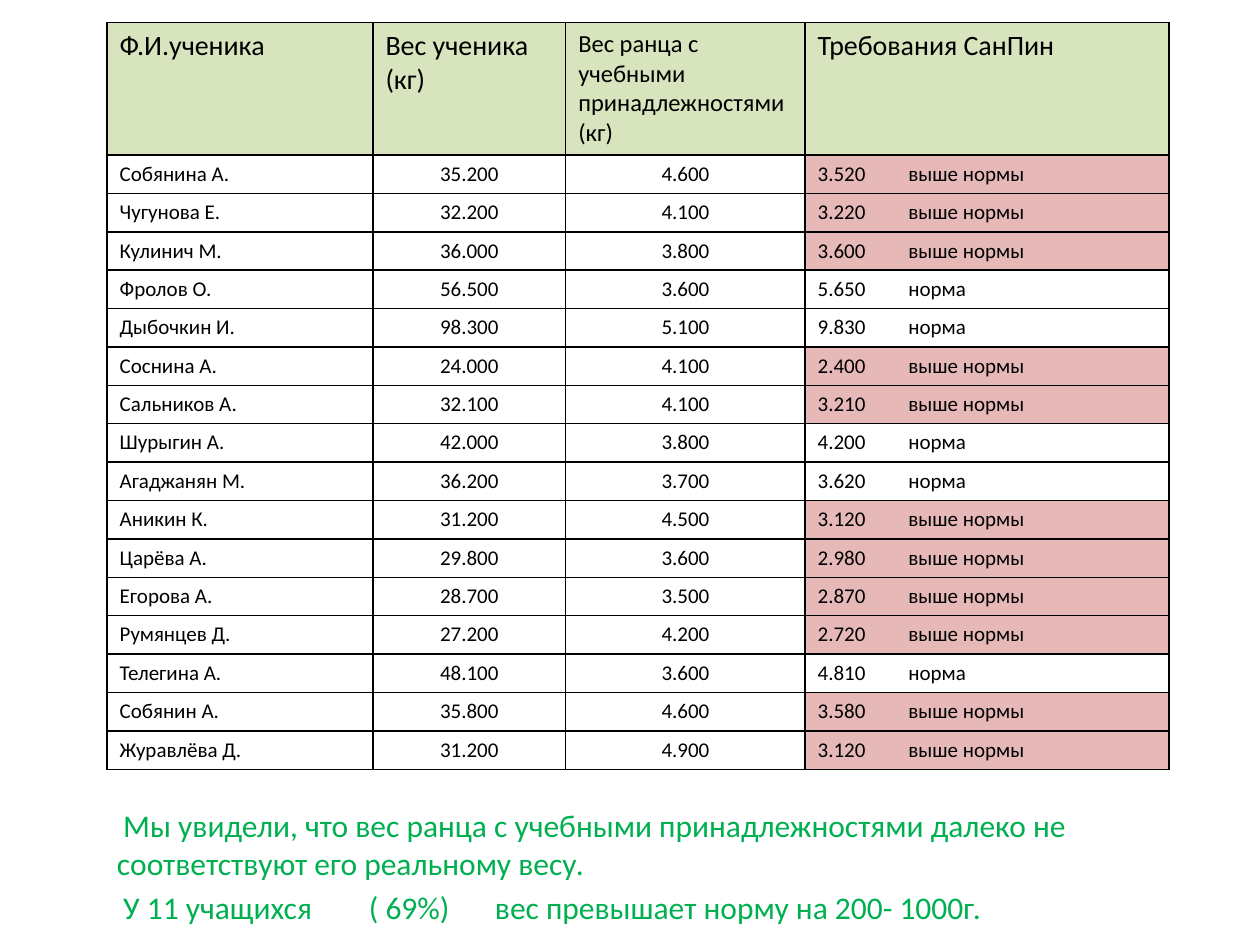
from pptx import Presentation
from pptx.dml.color import RGBColor
from pptx.enum.text import PP_ALIGN as Align
from pptx.oxml.ns import qn
from pptx.util import Inches, Pt
from lxml.etree import SubElement

FONT = "Calibri"
BLACK, GREEN = "000000", "00B050"
HEADER_FILL, OVER_FILL = "D7E4BD", "E6B9B8"

COLUMN_WIDTHS = (2.11, 1.53, 1.9, 2.89)
HEADER_HEIGHT, ROW_HEIGHT = 1.05, 0.305
STATUS_TAB = 0.72

HEADERS = (
    ("Ф.И.ученика", 16),
    ("Вес ученика\n(кг)", 16),
    ("Вес ранца с учебными принадлежностями\n(кг)", 14),
    ("Требования СанПин", 16),
)
# Name, pupil's weight, satchel weight, above the norm
PUPILS = (
    ("Собянина А.", 35.2, 4.6, True),
    ("Чугунова Е.", 32.2, 4.1, True),
    ("Кулинич М.", 36.0, 3.8, True),
    ("Фролов О.", 56.5, 3.6, False),
    ("Дыбочкин И.", 98.3, 5.1, False),
    ("Соснина А.", 24.0, 4.1, True),
    ("Сальников А.", 32.1, 4.1, True),
    ("Шурыгин А.", 42.0, 3.8, False),
    ("Агаджанян М.", 36.2, 3.7, False),
    ("Аникин К.", 31.2, 4.5, True),
    ("Царёва А.", 29.8, 3.6, True),
    ("Егорова А.", 28.7, 3.5, True),
    ("Румянцев Д.", 27.2, 4.2, True),
    ("Телегина А.", 48.1, 3.6, False),
    ("Собянин А.", 35.8, 4.6, True),
    ("Журавлёва Д.", 31.2, 4.9, True),
)
CONCLUSIONS = (
    "Мы увидели, что вес ранца с учебными принадлежностями "
    "далеко не соответствуют его реальному весу.",
    "У 11 учащихся\t( 69%)\tвес превышает норму на 200- 1000г.",
)


def rgb(value):
    return RGBColor.from_string(value)


def style_text(tf, size, color=BLACK, align=Align.LEFT):
    for p in tf.paragraphs:
        p.alignment = align
        for r in p.runs:
            r.font.name = FONT
            r.font.size = Pt(size)
            r.font.color.rgb = rgb(color)


def set_tabs(p, *stops):
    tabs = SubElement(p._p.get_or_add_pPr(), qn("a:tabLst"))
    for stop in stops:
        SubElement(tabs, qn("a:tab"), pos=str(Inches(stop)), algn="l")


def set_borders(cell):
    tc_pr = cell._tc.get_or_add_tcPr()
    for index, side in enumerate(("lnL", "lnR", "lnT", "lnB")):
        ln = SubElement(tc_pr, qn(f"a:{side}"), w=str(Pt(1)))
        fill = SubElement(ln, qn("a:solidFill"))
        SubElement(fill, qn("a:srgbClr"), val=BLACK)
        tc_pr.remove(ln)
        tc_pr.insert(index, ln)  # borders precede the fill


def fill_cell(cell, text, size, fill=None, align=Align.LEFT):
    cell.text_frame.text = text
    style_text(cell.text_frame, size, align=align)
    if fill:
        cell.fill.solid()
        cell.fill.fore_color.rgb = rgb(fill)
    else:
        cell.fill.background()
    set_borders(cell)


def add_weight_table(slide):
    rows = len(PUPILS) + 1
    height = HEADER_HEIGHT + ROW_HEIGHT * len(PUPILS)
    table = slide.shapes.add_table(
        rows, len(HEADERS), Inches(0.85), Inches(0.18),
        Inches(sum(COLUMN_WIDTHS)), Inches(height)).table
    for column, width in zip(table.columns, COLUMN_WIDTHS):
        column.width = Inches(width)
    for row in table.rows:
        row.height = Inches(ROW_HEIGHT)
    table.rows[0].height = Inches(HEADER_HEIGHT)
    table.first_row = table.horz_banding = False

    for col, (text, size) in enumerate(HEADERS):
        fill_cell(table.cell(0, col), text, size, HEADER_FILL)
    for row, (name, weight, satchel, over) in enumerate(PUPILS, 1):
        fill_cell(table.cell(row, 0), name, 12)
        for col, value in enumerate((weight, satchel), 1):
            fill_cell(table.cell(row, col), f"{value:.3f}", 12, align=Align.CENTER)
        limit = table.cell(row, 3)
        status = "выше нормы" if over else "норма"
        fill_cell(limit, f"{weight / 10:.3f}\t{status}", 12, OVER_FILL if over else None)
        set_tabs(limit.text_frame.paragraphs[0], STATUS_TAB)


def add_conclusions(slide):
    box = slide.shapes.add_textbox(Inches(0.83), Inches(6.35), Inches(8.43), Inches(1.02))
    tf = box.text_frame
    tf.word_wrap = True
    tf.text = "\n".join(CONCLUSIONS)
    style_text(tf, 18, GREEN)
    for p in tf.paragraphs:
        p.space_before = Pt(3.6)
        p._p.get_or_add_pPr().set("indent", str(Inches(0.05)))
    set_tabs(tf.paragraphs[1], 1.73, 2.48)


def main():
    prs = Presentation()
    prs.slide_width, prs.slide_height = Inches(10), Inches(7.5)
    slide = prs.slides.add_slide(prs.slide_layouts[6])
    add_conclusions(slide)
    add_weight_table(slide)
    prs.save("out.pptx")


if __name__ == "__main__":
    main()
